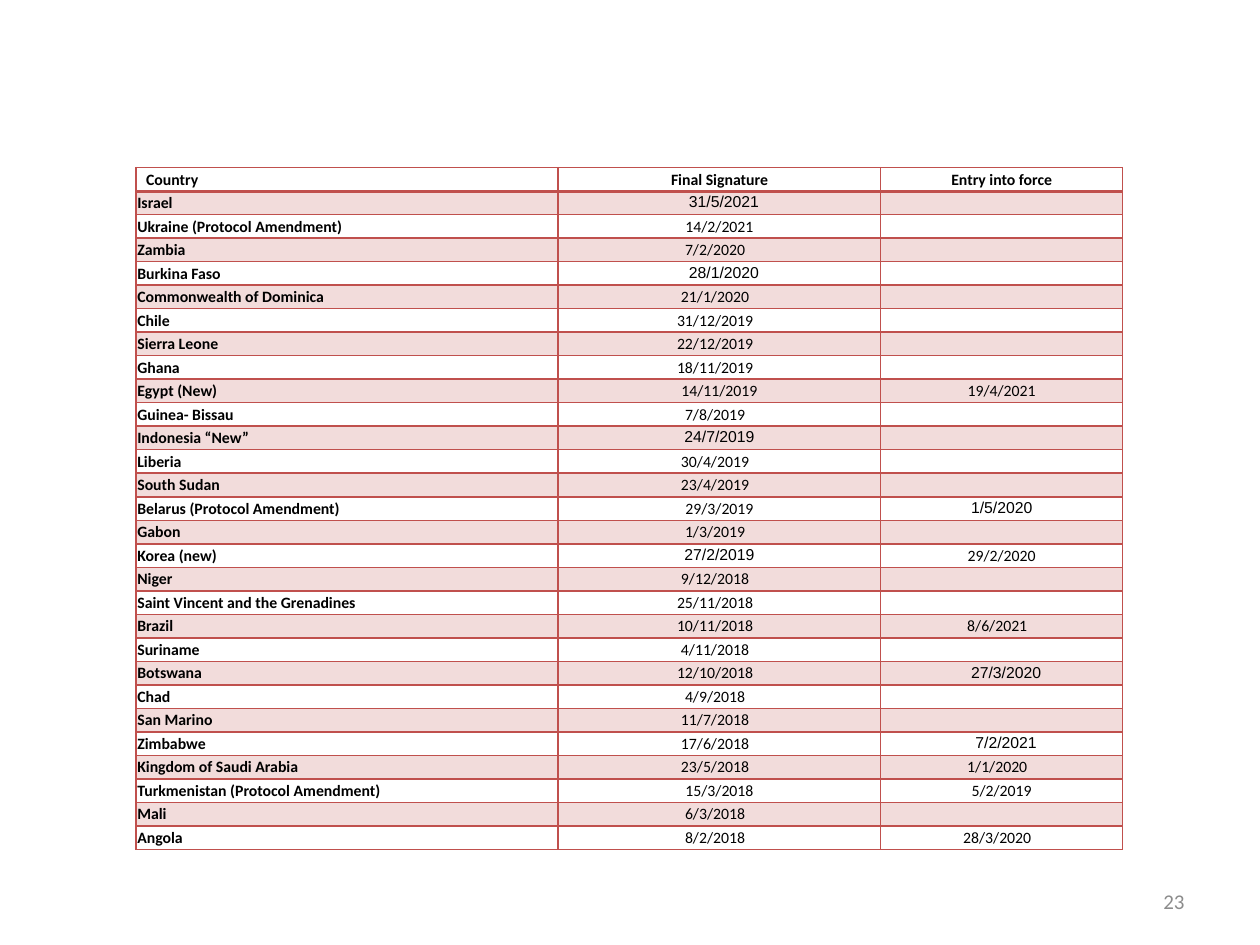
from lxml import etree
from pptx import Presentation
from pptx import util as u
from pptx.dml.color import RGBColor
from pptx.enum import text
from pptx.oxml.ns import qn

COLORS = {"rule": "C0504D", "text": "000000", "number": "8C8C8C"}
FONT = "Calibri"
SIZE = 9
INDENT = u.Inches(0.07)
INSET = u.Inches(0.01)
COLUMN_WIDTHS = (3.35, 2.56, 1.92)
TABLE_LEFT, TABLE_TOP, TABLE_HEIGHT = 1.08, 1.33, 5.42

HEADER = ("Country", "Final Signature", "Entry into force")
# Country, final signature, entry into force
TREATIES = [
    ("Israel", "31/5/2021", ""),
    ("Ukraine (Protocol Amendment)", "14/2/2021", ""),
    ("Zambia", "7/2/2020", ""),
    ("Burkina Faso", "28/1/2020", ""),
    ("Commonwealth of Dominica", "21/1/2020", ""),
    ("Chile", "31/12/2019", ""),
    ("Sierra Leone", "22/12/2019", ""),
    ("Ghana", "18/11/2019", ""),
    ("Egypt (New)", "14/11/2019", "19/4/2021"),
    ("Guinea- Bissau", "7/8/2019", ""),
    ("Indonesia “New”", "24/7/2019", ""),
    ("Liberia", "30/4/2019", ""),
    ("South Sudan", "23/4/2019", ""),
    ("Belarus (Protocol Amendment)", "29/3/2019", "1/5/2020"),
    ("Gabon", "1/3/2019", ""),
    ("Korea (new)", "27/2/2019", "29/2/2020"),
    ("Niger", "9/12/2018", ""),
    ("Saint Vincent and the Grenadines", "25/11/2018", ""),
    ("Brazil", "10/11/2018", "8/6/2021"),
    ("Suriname", "4/11/2018", ""),
    ("Botswana", "12/10/2018", "27/3/2020"),
    ("Chad", "4/9/2018", ""),
    ("San Marino", "11/7/2018", ""),
    ("Zimbabwe", "17/6/2018", "7/2/2021"),
    ("Kingdom of Saudi Arabia", "23/5/2018", "1/1/2020"),
    ("Turkmenistan (Protocol Amendment)", "15/3/2018", "5/2/2019"),
    ("Mali", "6/3/2018", ""),
    ("Angola", "8/2/2018", "28/3/2020"),
]
RIGHT_TO_LEFT = {"31/5/2021", "28/1/2020", "24/7/2019", "1/5/2020",
                 "27/2/2019", "27/3/2020", "7/2/2021"}
INDENTED = {*HEADER, "14/2/2021", "14/11/2019", "19/4/2021", "24/7/2019",
            "29/3/2019", "1/5/2020", "27/2/2019", "29/2/2020",
            "15/3/2018", "5/2/2019"}


def write(paragraph, words, size=SIZE, color="text", bold=False,
          align=text.PP_ALIGN.LEFT, spacing=None):
    paragraph.alignment = align
    paragraph.line_spacing = spacing
    if not words:
        etree.SubElement(paragraph._p, qn("a:endParaRPr"), sz=str(size * 100))
        return
    run = paragraph.add_run()
    run.text = words
    run.font.name = FONT
    run.font.size = u.Pt(size)
    run.font.bold = bold
    run.font.color.rgb = RGBColor.from_string(COLORS[color])


def set_margins(paragraph, words):
    """Indent a cell's paragraph and set its reading direction."""
    properties = paragraph._p.get_or_add_pPr()
    properties.set("marL", str(INDENT if words in INDENTED else 0))
    properties.set("marR", str(INDENT))
    properties.set("indent", "0")
    if words in RIGHT_TO_LEFT:
        properties.set("rtl", "1")
        for run in paragraph.runs:
            etree.SubElement(run.font._element, qn("a:cs"), typeface="Arial")


def add_solid(parent, color):
    solid = etree.SubElement(parent, qn("a:solidFill"))
    etree.SubElement(solid, qn("a:srgbClr"), val=COLORS[color])


def draw_borders(cell, top=1, bottom=1):
    properties = cell._tc.get_or_add_tcPr()
    for side, width in (("L", 1), ("R", 1), ("T", top), ("B", bottom)):
        line = etree.SubElement(properties, qn(f"a:ln{side}"), w=str(u.Pt(width)))
        add_solid(line, "rule")


def fill_cell(cell, banded):
    if not banded:
        cell.fill.background()
        return
    cell.fill.solid()
    cell.fill.fore_color.rgb = RGBColor.from_string(COLORS["rule"])
    color = cell._tc.tcPr.find(qn("a:solidFill"))[0]
    etree.SubElement(color, qn("a:alpha"), val="20000")


def format_cell(cell, words, row, column):
    cell.margin_left = cell.margin_right = INSET
    cell.margin_top = cell.margin_bottom = INSET
    paragraph = cell.text_frame.paragraphs[0]
    align = text.PP_ALIGN.CENTER if column else text.PP_ALIGN.LEFT
    write(paragraph, words, bold=row == 0 or column == 0, align=align, spacing=1.07)
    set_margins(paragraph, words)
    draw_borders(cell, top=2 if row == 1 else 1, bottom=2 if row == 0 else 1)
    fill_cell(cell, banded=row % 2 == 1)


def add_treaty_table(slide):
    rows = [HEADER, *TREATIES]
    table = slide.shapes.add_table(
        len(rows), len(HEADER), u.Inches(TABLE_LEFT), u.Inches(TABLE_TOP),
        u.Inches(sum(COLUMN_WIDTHS)), u.Inches(TABLE_HEIGHT)).table
    table.first_row = table.horz_banding = False
    for column, width in zip(table.columns, COLUMN_WIDTHS):
        column.width = u.Inches(width)
    for r, row in enumerate(rows):
        for c, words in enumerate(row):
            format_cell(table.cell(r, c), words, r, c)


def add_page_number(slide, number):
    box = slide.shapes.add_textbox(
        u.Inches(7.17), u.Inches(6.95), u.Inches(2.33), u.Inches(0.4))
    frame = box.text_frame
    frame.word_wrap = True
    frame.vertical_anchor = text.MSO_ANCHOR.MIDDLE
    write(frame.paragraphs[0], number, size=12, color="number",
          align=text.PP_ALIGN.RIGHT)


def main():
    presentation = Presentation()
    presentation.slide_width = u.Inches(10)
    presentation.slide_height = u.Inches(7.5)
    slide = presentation.slides.add_slide(presentation.slide_layouts[6])
    add_page_number(slide, "23")
    add_treaty_table(slide)
    presentation.save("out.pptx")


if __name__ == "__main__":
    main()
